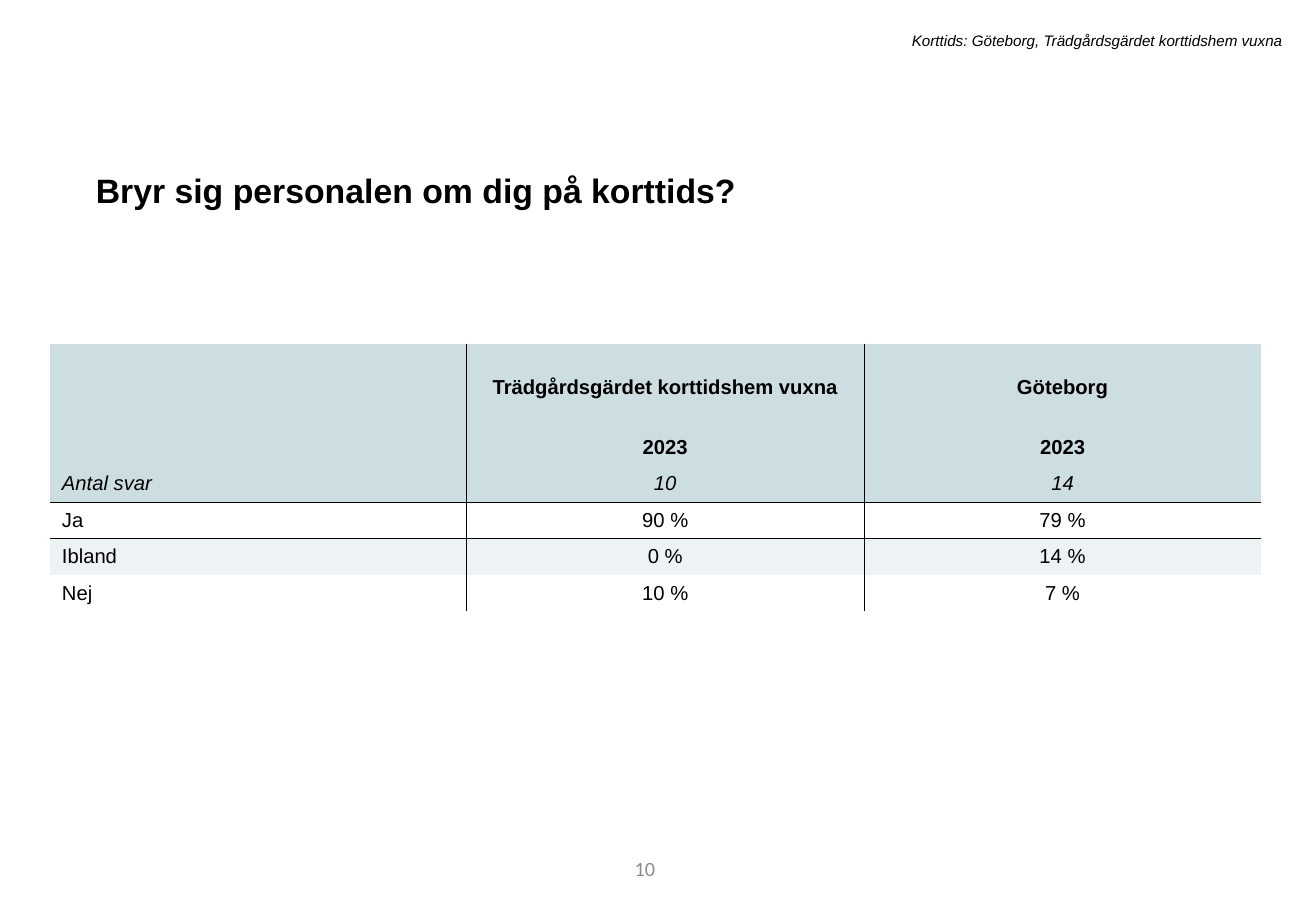
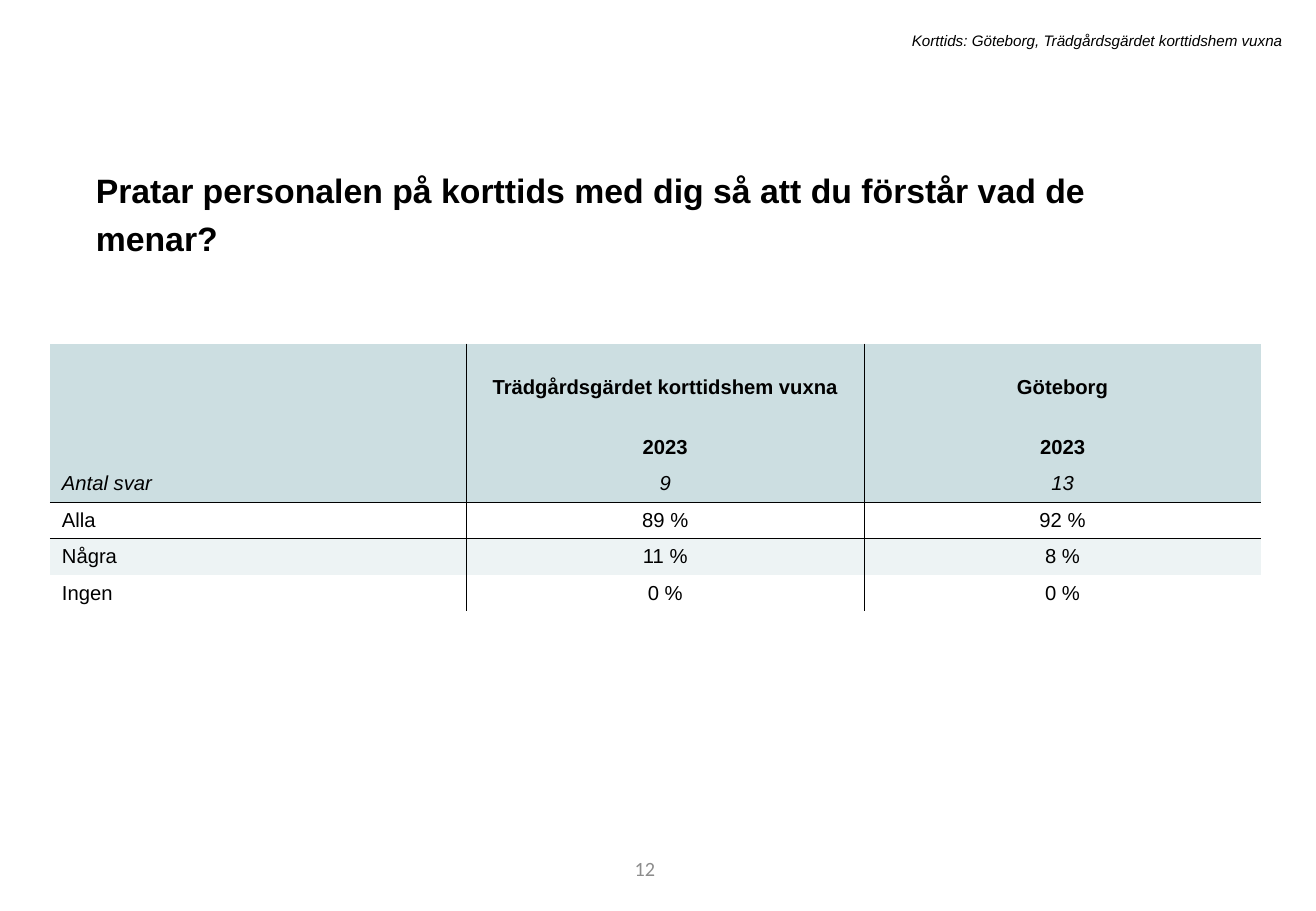
"""Build two survey result slides, each with a question and a table of answers."""
from lxml import etree
from pptx import Presentation
from pptx.dml.color import RGBColor
from pptx.enum.text import MSO_ANCHOR, PP_ALIGN
from pptx.oxml.ns import qn
from pptx.util import Inches, Pt

LEFT, CENTER, RIGHT = PP_ALIGN.LEFT, PP_ALIGN.CENTER, PP_ALIGN.RIGHT
TOP, MIDDLE, BOTTOM = MSO_ANCHOR.TOP, MSO_ANCHOR.MIDDLE, MSO_ANCHOR.BOTTOM

BLACK, GREY, HEAD_FILL, BAND_FILL = "000000", "8C8C8C", "CCDEE1", "EDF3F4"
PLAIN_TABLE = "{2D5ABB26-0587-4C30-8999-92F81FD0307C}"

UNIT = "Trädgårdsgärdet korttidshem vuxna"
CITY = "Göteborg"
RUNNING_HEAD = f"Korttids: {CITY}, {UNIT}"
HEADINGS = [("", UNIT, CITY), ("", "2023", "2023")]
HEAD_ROWS = len(HEADINGS) + 1

SLIDES = [
    {
        "number": "10",
        "question": "Bryr sig personalen om dig på korttids?",
        "count": ("Antal svar", "10", "14"),
        "answers": [
            ("Ja", "90 %", "79 %"),
            ("Ibland", "0 %", "14 %"),
            ("Nej", "10 %", "7 %"),
        ],
    },
    {
        "number": "12",
        "question": "Pratar personalen på korttids med dig så att du förstår vad de menar?",
        "count": ("Antal svar", "9", "13"),
        "answers": [
            ("Alla", "89 %", "92 %"),
            ("Några", "11 %", "8 %"),
            ("Ingen", "0 %", "0 %"),
        ],
    },
]

NUMBER_AREA = (3.05, 6.95, 2.44, 0.4)
QUESTION_AREA = (0.69, 1.28, 9.4, 0.47)
RUNNING_HEAD_AREA = (1.79, 0.21, 8.86, 0.25)
TABLE_LEFT, TABLE_TOP = 0.41, 2.83
COLUMN_WIDTHS = (3.43, 3.27, 3.27)
HEADING_HEIGHT, ROW_HEIGHT = 0.5, 0.3


def color(value):
    return RGBColor.from_string(value)


def write(frame, text, size=12, font="Arial", ink=BLACK, bold=False, italic=False,
          align=LEFT, line_spacing=None, before=None):
    para = frame.paragraphs[0]
    para.alignment = align
    para.line_spacing = line_spacing
    para.space_before = before
    span = para.add_run()
    span.text = text
    span.font.size = Pt(size)
    span.font.name = font
    span.font.bold = bold
    span.font.italic = italic
    span.font.color.rgb = color(ink)


def add_text(page, area, text, anchor=TOP, **style):
    box = page.shapes.add_textbox(*map(Inches, area))
    box.text_frame.word_wrap = True
    box.text_frame.vertical_anchor = anchor
    write(box.text_frame, text, **style)


def add_borders(cell, sides):
    properties = cell._tc.get_or_add_tcPr()
    for side in sides:
        line = etree.SubElement(properties, qn(f"a:ln{side}"), w=str(Pt(0.25)))
        fill = etree.SubElement(line, qn("a:solidFill"))
        etree.SubElement(fill, qn("a:srgbClr"), val=BLACK)


def format_cell(cell, text, row, column):
    sides = [("L", column > 0), ("R", column < len(COLUMN_WIDTHS) - 1),
             ("T", row == HEAD_ROWS), ("B", row == HEAD_ROWS - 1)]
    add_borders(cell, [side for side, shown in sides if shown])
    if row < HEAD_ROWS or (row - HEAD_ROWS) % 2:
        cell.fill.solid()
        cell.fill.fore_color.rgb = color(HEAD_FILL if row < HEAD_ROWS else BAND_FILL)
    else:
        cell.fill.background()
    is_heading = row < len(HEADINGS)
    cell.vertical_anchor = BOTTOM if is_heading else MIDDLE
    if text:
        write(cell.text_frame, text, bold=is_heading, italic=row == HEAD_ROWS - 1,
              align=CENTER if column else LEFT)


def add_result_table(page, rows):
    heights = [HEADING_HEIGHT if row < len(HEADINGS) else ROW_HEIGHT
               for row in range(len(rows))]
    area = (TABLE_LEFT, TABLE_TOP, sum(COLUMN_WIDTHS), sum(heights))
    table = page.shapes.add_table(len(rows), len(COLUMN_WIDTHS), *map(Inches, area)).table
    table.first_row = table.horz_banding = False
    table._tbl.tblPr.find(qn("a:tableStyleId")).text = PLAIN_TABLE
    for column, width in zip(table.columns, COLUMN_WIDTHS):
        column.width = Inches(width)
    for row, (height, texts) in enumerate(zip(heights, rows)):
        table.rows[row].height = Inches(height)
        for column, text in enumerate(texts):
            format_cell(table.cell(row, column), text, row, column)


def add_page(deck, content):
    page = deck.slides.add_slide(deck.slide_layouts[6])
    add_text(page, NUMBER_AREA, content["number"], anchor=MIDDLE,
             font="Calibri", ink=GREY, align=RIGHT)
    add_text(page, QUESTION_AREA, content["question"], size=20, bold=True,
             line_spacing=1.2, before=Pt(10))
    add_text(page, RUNNING_HEAD_AREA, RUNNING_HEAD, size=9, italic=True, align=RIGHT)
    add_result_table(page, HEADINGS + [content["count"]] + content["answers"])


def main():
    deck = Presentation()
    deck.slide_width, deck.slide_height = Inches(10.83), Inches(7.5)
    for content in SLIDES:
        add_page(deck, content)
    deck.save("out.pptx")


if __name__ == "__main__":
    main()
